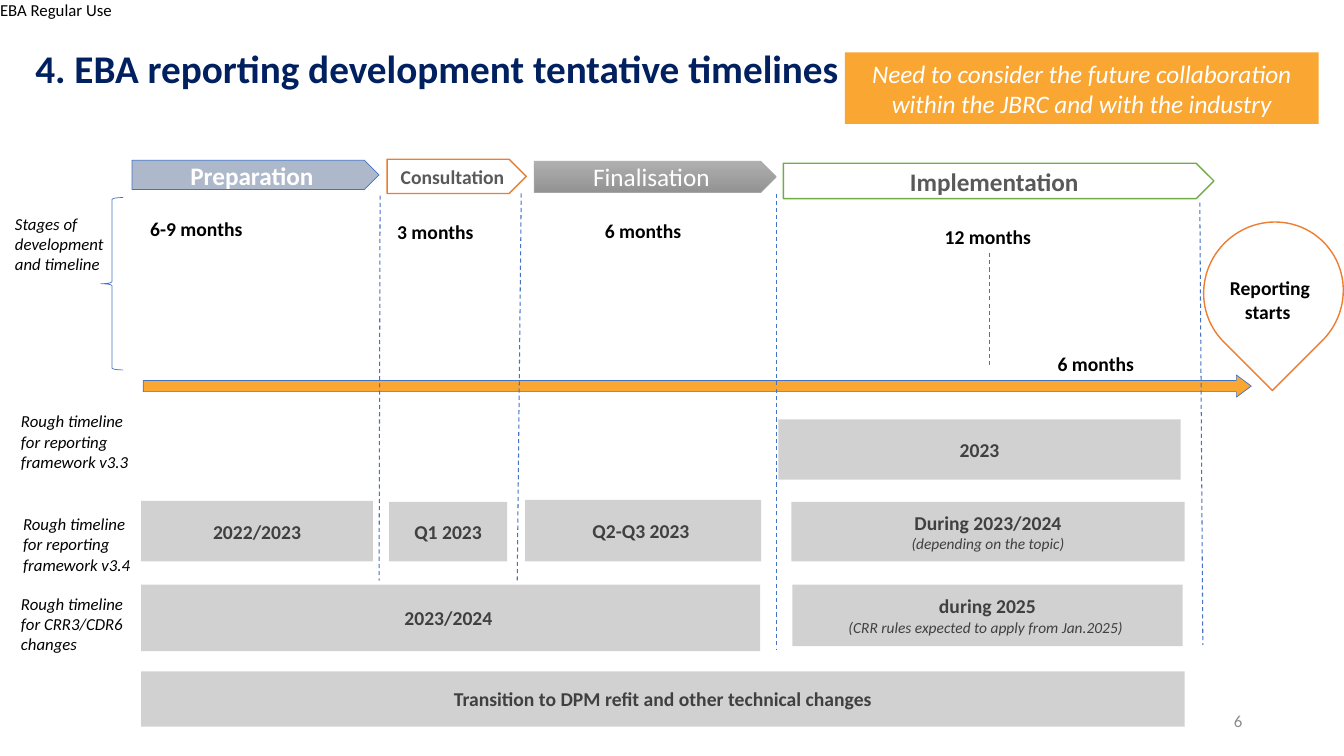
from lxml import etree
from pptx import Presentation, util as u
from pptx.dml.color import RGBColor
from pptx.enum import dml, shapes, text
from pptx.oxml.ns import qn

BLUE, ORANGE, AMBER, GREY = "4472C4", "ED7D31", "FAA633", "A5A5A5"
DARK, BLACK, WHITE = "404040", "000000", "FFFFFF"
KIND = shapes.MSO_SHAPE
ALIGN = text.PP_ALIGN
MIDDLE = text.MSO_ANCHOR.MIDDLE


def paint(target, colour):
    """Give a fill or a font a solid hex colour."""
    if hasattr(target, "solid"):
        target.solid()
        target = target.fore_color
    else:
        target = target.color
    target.rgb = RGBColor.from_string(colour)


class Board:
    """The current slide together with its text and line style."""

    font = "Calibri"

    def __init__(self, page):
        self.page = page

    def set_text(self, frame, lines, align=ALIGN.LEFT, anchor=text.MSO_ANCHOR.TOP):
        """Fill a frame; each line is (words, size, colour, style letters)."""
        frame.word_wrap = True
        frame.auto_size = text.MSO_AUTO_SIZE.NONE
        frame.vertical_anchor = anchor
        for index, (words, size, colour, style) in enumerate(lines):
            para = frame.add_paragraph() if index else frame.paragraphs[0]
            para.alignment = align
            span = para.add_run()
            span.text = words
            span.font.name, span.font.size = self.font, u.Pt(size)
            span.font.bold, span.font.italic = "b" in style, "i" in style
            paint(span.font, colour)

    def title(self, words, *area):
        box = self.page.shapes.title
        box.left, box.top, box.width, box.height = map(u.Inches, area)
        self.set_text(box.text_frame, [(words, 28, "002060", "b")], anchor=MIDDLE)
        box.text_frame.paragraphs[0].line_spacing = 0.9

    def label(self, area, words, size=14, style="b", colour=BLACK, align=ALIGN.LEFT, **options):
        box = self.page.shapes.add_textbox(*map(u.Inches, area))
        self.set_text(box.text_frame, [(words, size, colour, style)], align, **options)
        return box

    def shape(self, kind, area, fill=None, line=None, width=0.5, lines=()):
        box = self.page.shapes.add_shape(kind, *map(u.Inches, area))
        box.shadow.inherit = False
        if fill:
            paint(box.fill, fill)
        else:
            box.fill.background()
        if line:
            paint(box.line.fill, line)
            box.line.width = u.Pt(width)
        else:
            box.line.fill.background()
        if lines:
            box.text_frame.margin_top = box.text_frame.margin_bottom = 0
            self.set_text(box.text_frame, lines, ALIGN.CENTER, MIDDLE)
        return box

    def period(self, area, words, note=None):
        """Half-transparent grey bar with a period and an optional small note."""
        lines = [(words, 14, DARK, "b")]
        if note:
            lines.append((note, 11, DARK, "i"))
        bar = self.shape(KIND.RECTANGLE, area, GREY, lines=lines)
        colour = bar._element.spPr.find(qn("a:solidFill"))[0]
        etree.SubElement(colour, qn("a:alpha")).set("val", "50000")

    def dashed(self, *ends):
        line = self.page.shapes.add_connector(shapes.MSO_CONNECTOR.STRAIGHT, *map(u.Inches, ends))
        paint(line.line.fill, BLUE)
        line.line.width = u.Pt(0.75)
        line.line.dash_style = dml.MSO_LINE.DASH
        etree.SubElement(line._element.spPr, qn("a:effectLst"))


def main():
    deck = Presentation()
    deck.slide_width, deck.slide_height = u.Inches(13.33), u.Inches(7.5)
    board = Board(deck.slides.add_slide(deck.slide_layouts[5]))

    mark = board.label((0, 0, 1.15, 0.2), "EBA Regular Use", 12, "")
    frame = mark.text_frame
    frame.margin_left = frame.margin_top = frame.margin_right = frame.margin_bottom = 0
    board.title("4. EBA reporting development tentative timelines", 0.25, -0.02, 11.5, 1.45)
    board.label((9.42, 6.95, 3, 0.4), "6", 12, "", "8C8C8C", ALIGN.RIGHT, anchor=MIDDLE)

    arrow = board.shape(KIND.RIGHT_ARROW, (1.42, 3.72, 10.99, 0.22), AMBER, BLUE)
    arrow.adjustments[1] = 0.67

    stages = [
        ((1.31, 1.59, 2.45, 0.29), "ADB9CA", BLUE, 0.5, ("Preparation", 18, WHITE, "b")),
        ((3.84, 1.58, 1.38, 0.34), WHITE, ORANGE, 1, ("Consultation", 14, "595959", "b")),
        ((5.3, 1.6, 2.4, 0.31), GREY, GREY, 0.5, ("Finalisation", 18, WHITE, "")),
        ((7.77, 1.62, 4.27, 0.35), WHITE, "70AD47", 1, ("Implementation", 18, "595959", "b")),
    ]
    plates = [board.shape(KIND.PENTAGON, area, fill, line, width, [words])
              for area, fill, line, width, words in stages]
    finalisation = plates[2].fill
    finalisation.gradient()
    finalisation.gradient_angle = 270
    for stop, colour, position in zip(finalisation.gradient_stops, ("AFAFAF", "939393"), (0, 1)):
        stop.color.rgb = RGBColor.from_string(colour)
        stop.position = position

    for ends in [(11.9, 2.01, 11.93, 6.4), (7.7, 1.92, 7.7, 6.44), (5.17, 1.92, 5.13, 5.76),
                 (3.77, 1.94, 3.76, 5.76), (9.81, 2.51, 9.81, 3.64)]:
        board.dashed(*ends)
    for left, top, duration in [(1.39, 2.1, "6-9 months"), (3.84, 2.13, "3 months"),
                                (5.9, 2.12, "6 months"), (9.27, 2.18, "12 months"),
                                (10.39, 3.44, "6 months")]:
        board.label((left, top, 1.15, 0.34), duration)

    board.shape(KIND.LEFT_BRACE, (1, 1.96, 0.22, 1.71), line=BLUE)
    for left, top, height, caption in [
        (0.05, 2.07, 0.71, "Stages of development and timeline"),
        (0.11, 4.03, 0.91, "Rough timeline for reporting framework v3.3"),
        (0.13, 5.05, 0.71, "Rough timeline for reporting framework v3.4"),
        (0.11, 5.84, 0.71, "Rough timeline for CRR3/CDR6 changes"),
    ]:
        board.label((left, top, 1.29, height), caption, 12, "i")

    pin = board.shape(KIND.TEAR, (11.93, 2.21, 1.4, 1.37), WHITE, ORANGE, 1)
    pin.rotation = 135
    board.label((11.89, 2.69, 1.41, 1.04), "Reporting starts ", align=ALIGN.CENTER)

    board.period((7.72, 4.16, 3.99, 0.6), "2023")
    board.period((1.4, 4.97, 2.3, 0.6), "2022/2023")
    board.period((3.86, 4.98, 1.17, 0.59), "Q1 2023")
    board.period((5.21, 4.96, 2.34, 0.61), "Q2-Q3 2023 ")
    board.period((7.85, 4.98, 3.9, 0.59), "During 2023/2024", "(depending on the topic)")
    board.period((1.4, 5.8, 6.14, 0.66), "2023/2024 ")
    board.period((7.86, 5.8, 3.87, 0.61), "during 2025",
                 "(CRR rules expected to apply from Jan.2025) ")
    board.period((1.4, 6.66, 10.35, 0.55), "Transition to DPM refit and other technical changes")

    reminder = "Need to consider the future collaboration within the JBRC and with the industry"
    board.shape(KIND.RECTANGLE, (8.38, 0.52, 4.7, 0.71), AMBER, lines=[(reminder, 18, WHITE, "i")])

    deck.save("out.pptx")


if __name__ == "__main__":
    main()
